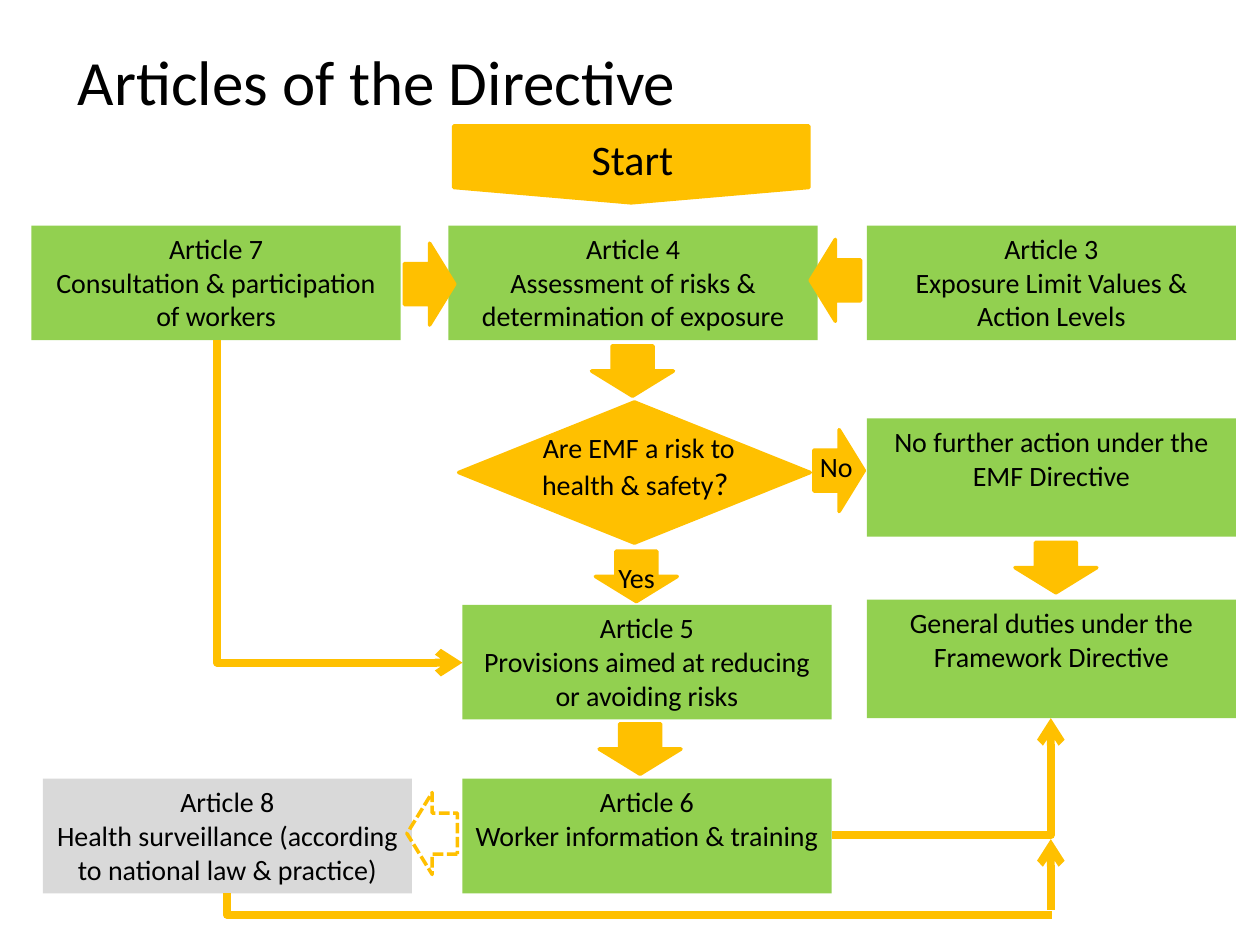
from lxml.etree import SubElement
from pptx import Presentation
from pptx.dml.color import RGBColor
from pptx.enum.dml import MSO_LINE
from pptx.enum.shapes import MSO_CONNECTOR as Link, MSO_SHAPE as Shape
from pptx.enum.text import MSO_ANCHOR as Anchor, PP_ALIGN as Align
from pptx.oxml.ns import qn
from pptx.util import Inches, Pt

BOX_WIDTH = 2.93
ARROW_SIZE = (0.4, 0.65)


def colour(value):
    return RGBColor.from_string(value)


class Flowchart:
    font = "Calibri"
    ink = "000000"
    gold = "FFC000"
    green = "92D050"
    grey = "D9D9D9"

    def __init__(self, deck):
        self.page = deck.slides.add_slide(deck.slide_layouts[6])

    def label(self, shape, text, size, align):
        frame = shape.text_frame
        frame.word_wrap = True
        frame.vertical_anchor = Anchor.TOP
        frame.text = text
        for para in frame.paragraphs:
            para.alignment = align
            for span in para.runs:
                self.style(span, size)

    def style(self, span, size):
        span.font.name = self.font
        span.font.size = Pt(size)
        span.font.color.rgb = colour(self.ink)

    def text(self, area, text, size=16, align=Align.CENTER):
        box = self.page.shapes.add_textbox(*map(Inches, area))
        self.label(box, text, size, align)
        return box

    def shape(self, kind, area, fill):
        shape = self.page.shapes.add_shape(kind, *map(Inches, area))
        shape.shadow.inherit = False
        if fill:
            shape.fill.solid()
            shape.fill.fore_color.rgb = colour(fill)
        else:
            shape.fill.background()
        return shape

    def box(self, left, top, text, height=0.91, fill=green):
        box = self.shape(Shape.RECTANGLE, (left, top, BOX_WIDTH, height), fill)
        box.line.fill.background()
        self.label(box, text, 16, Align.CENTER)

    def symbol(self, kind, area, fill=gold):
        symbol = self.shape(kind, area, fill)
        symbol.line.color.rgb = colour(self.gold)
        symbol.line.width = Pt(2)
        return symbol

    def arrow(self, left, top, turn=0, dashed=False):
        arrow = self.symbol(Shape.RIGHT_ARROW, (left, top, *ARROW_SIZE),
                            None if dashed else self.gold)
        arrow.rotation = turn
        if dashed:
            arrow.line.dash_style = MSO_LINE.SQUARE_DOT

    def line(self, start, end, kind=Link.STRAIGHT, head=True):
        line = self.page.shapes.add_connector(kind, *map(Inches, start + end))
        line.line.color.rgb = colour(self.gold)
        line.line.width = Pt(4.5)
        properties = line._element.spPr
        SubElement(properties, qn("a:effectLst"))
        if head:
            SubElement(properties.find(qn("a:ln")), qn("a:tailEnd"), type="arrow")
        return properties

    def across_then_up(self, start, end):
        properties = self.line(start, end, Link.ELBOW)
        properties.find(qn("a:prstGeom")).set("prst", "bentConnector2")

    def down_then_across(self, start, end, head=True):
        middle_x, middle_y = ((a + b) / 2 for a, b in zip(start, end))
        half_x, half_y = ((b - a) / 2 for a, b in zip(start, end))
        properties = self.line((middle_x + half_y, middle_y - half_x),
                               (middle_x - half_y, middle_y + half_x),
                               Link.ELBOW, head)
        properties.find(qn("a:prstGeom")).set("prst", "bentConnector2")
        properties.find(qn("a:xfrm")).set("rot", str(270 * 60000))


def main():
    deck = Presentation()
    deck.slide_width, deck.slide_height = Inches(10), Inches(7.5)
    chart = Flowchart(deck)

    chart.symbol(Shape.FLOWCHART_OFFPAGE_CONNECTOR, (3.6, 1, 2.82, 0.61))
    chart.text((4.13, 1.01, 1.78, 0.5), "Start", 24)

    chart.box(3.56, 1.79, "Article 4\nAssessment of risks & determination of exposure")
    chart.box(6.88, 1.79, "Article 3\nExposure Limit Values & Action Levels")
    chart.box(0.25, 1.79, "Article 7\nConsultation & participation of workers")

    chart.symbol(Shape.FLOWCHART_DECISION, (3.64, 3.19, 2.79, 1.12))
    question = chart.text((4.09, 3.37, 1.96, 0.67), "Are EMF a risk to health & safety")
    mark = question.text_frame.paragraphs[0].add_run()
    mark.text = "? "
    chart.style(mark, 18)

    chart.box(6.88, 3.32, "No further action under the EMF Directive", 0.94)
    chart.box(6.88, 4.76, "General duties under the Framework Directive", 0.94)
    chart.box(3.67, 4.8, "Article 5\nProvisions aimed at reducing or avoiding risks")
    chart.box(3.67, 6.18, "Article 6\nWorker information & training")
    chart.box(0.34, 6.18, "Article 8\nHealth surveillance (according to national law & practice)",
              fill=chart.grey)

    chart.arrow(6.46, 3.41)
    chart.text((6.41, 3.52, 0.54, 0.37), "No", align=Align.LEFT)
    chart.arrow(4.85, 4.25, 90)
    chart.text((4.81, 4.4, 0.57, 0.37), "Yes", align=Align.LEFT)
    chart.arrow(3.21, 1.93)
    chart.arrow(6.43, 1.9, 180)
    for left, top in ((4.82, 2.62), (8.18, 4.18), (4.88, 5.62)):
        chart.arrow(left, top, 90)
    chart.arrow(3.23, 6.29, 180, dashed=True)

    chart.down_then_across((1.72, 2.7), (3.67, 5.26))
    chart.across_then_up((6.6, 6.63), (8.34, 5.7))
    chart.down_then_across((1.8, 7.09), (8.35, 7.26), head=False)
    chart.line((8.34, 7.22), (8.34, 6.66))

    chart.text((0.52, 0.29, 8.38, 0.71), "Articles of the Directive", 36, Align.LEFT)
    deck.save("out.pptx")


if __name__ == "__main__":
    main()
